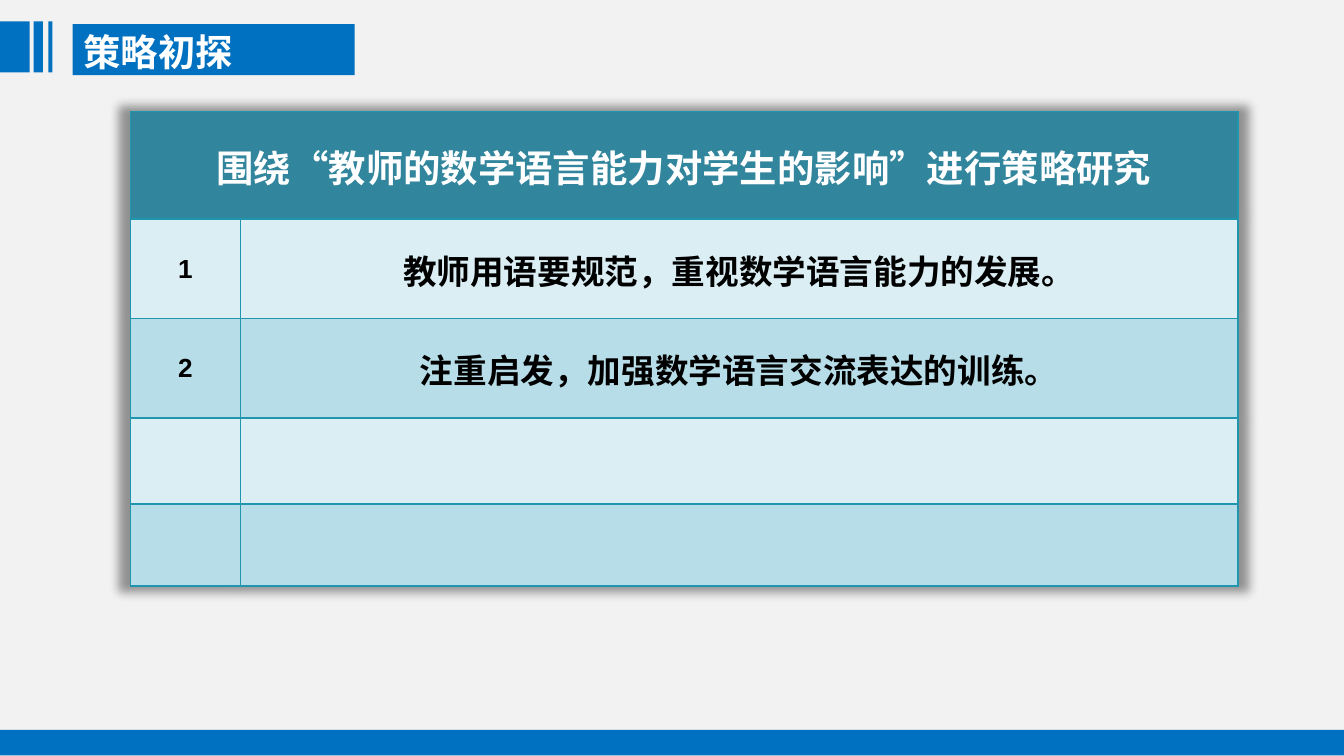
from lxml import etree
from pptx import Presentation
from pptx.dml.color import RGBColor
from pptx.enum.shapes import MSO_SHAPE
from pptx.enum.text import MSO_ANCHOR, PP_ALIGN
from pptx.oxml import parse_xml
from pptx.oxml.ns import nsdecls, qn
from pptx.util import Inches, Pt

RECT = MSO_SHAPE.RECTANGLE
MIDDLE = MSO_ANCHOR.MIDDLE
CENTER = PP_ALIGN.CENTER

BLUE = RGBColor(0x00, 0x70, 0xC0)
GREY = RGBColor(0xF2, 0xF2, 0xF2)
WHITE = RGBColor(0xFF, 0xFF, 0xFF)
BLACK = RGBColor(0x00, 0x00, 0x00)
TEAL = RGBColor(0x31, 0x85, 0x9C)
PALE = RGBColor(0xDB, 0xEE, 0xF4)
LIGHT = RGBColor(0xB7, 0xDE, 0xE8)
EDGE = RGBColor(0x20, 0x95, 0xAE)
CJK = "Noto Sans CJK SC"


def style(par, size, color, face):
    font = par.runs[0].font
    font.size, font.bold, font.name = Pt(size), True, face
    font.color.rgb = color
    east = etree.Element(qn("a:ea"), typeface=CJK)
    par.runs[0]._r.rPr.find(qn("a:latin")).addnext(east)


def border(cell):
    props = cell._tc.get_or_add_tcPr()
    for i, side in enumerate(("lnL", "lnR", "lnT", "lnB")):
        props.insert(i, parse_xml(
            f'<a:{side} {nsdecls("a")} w="{Pt(1)}"><a:solidFill>'
            f'<a:srgbClr val="{EDGE}"/></a:solidFill></a:{side}>'))


# Widescreen page, 16 to 9
prs = Presentation()
prs.slide_width = Inches(10)
prs.slide_height = Inches(10) * 9 // 16
slide = prs.slides.add_slide(prs.slide_layouts[6])
slide.background.fill.solid()
slide.background.fill.fore_color.rgb = GREY

# Title banner, three stripes and footer bar
bars = [
    (0.54, 0.18, 2.1, 0.38),
    (0, 0.16, 0.22, 0.38),
    (0.25, 0.16, 0.07, 0.38),
    (0.36, 0.16, 0.03, 0.38),
    (0, 5.43, 10, 0.19),
]
for box in bars:
    bar = slide.shapes.add_shape(RECT, *map(Inches, box))
    bar.shadow.inherit = False
    bar.fill.solid()
    bar.fill.fore_color.rgb = BLUE
    bar.line.fill.background()

# Title
title = slide.shapes.add_textbox(
    Inches(0.55), Inches(0.18), Inches(3.6), Inches(0.41))
frame = title.text_frame
frame.word_wrap = True
frame.margin_left = frame.margin_right = Inches(0.07)
frame.margin_top = frame.margin_bottom = Inches(0.04)
frame.text = "策略初探"
style(frame.paragraphs[0], 20, WHITE, CJK)

# Strategy table
rows = [
    ("围绕“教师的数学语言能力对学生的影响”进行策略研究", ""),
    ("1", "教师用语要规范，重视数学语言能力的发展。"),
    ("2", "注重启发，加强数学语言交流表达的训练。"),
    ("", ""),
    ("", ""),
]
tall = [0.8, 0.74, 0.74, 0.64, 0.61]
wide = [0.82, 7.42]
table = slide.shapes.add_table(
    len(rows), len(wide), Inches(0.97), Inches(0.83),
    Inches(sum(wide)), Inches(sum(tall))).table
for col, width in zip(table.columns, wide):
    col.width = Inches(width)
for row, height in zip(table.rows, tall):
    row.height = Inches(height)
table.cell(0, 0).merge(table.cell(0, 1))

for r, texts in enumerate(rows):
    for c, text in enumerate(texts):
        cell = table.cell(r, c)
        cell.fill.solid()
        cell.fill.fore_color.rgb = TEAL if r == 0 else PALE if r % 2 else LIGHT
        border(cell)
        cell.vertical_anchor = MIDDLE
        cell.margin_left = cell.margin_right = cell.margin_top = Inches(0.01)
        cell.margin_bottom = 0
        if text:
            cell.text_frame.text = text
            par = cell.text_frame.paragraphs[0]
            par.alignment = CENTER
            size = 20 if r == 0 else (14, 18)[c]
            style(par, size, BLACK if r else WHITE, "Arial")

# Soft shadow all round the table
table._tbl.tblPr.insert(0, parse_xml(
    f'<a:effectLst {nsdecls("a")}><a:outerShdw blurRad="{Pt(5)}" sx="102000" '
    'sy="102000" algn="ctr" rotWithShape="0"><a:srgbClr val="000000">'
    '<a:alpha val="40000"/></a:srgbClr></a:outerShdw></a:effectLst>'))

prs.save("out.pptx")
